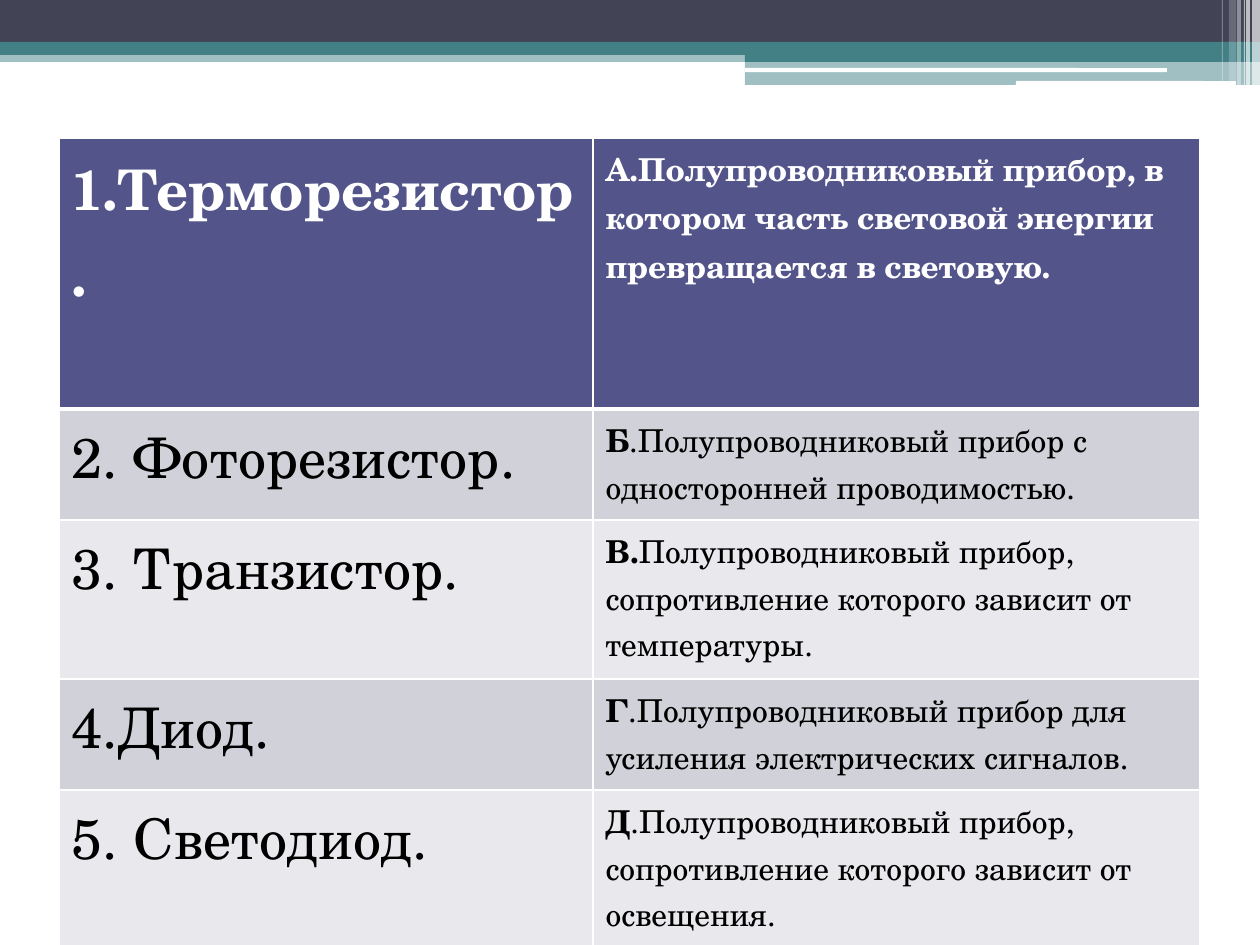
from lxml.etree import SubElement
from pptx import Presentation
from pptx.dml.color import RGBColor
from pptx.enum.shapes import MSO_SHAPE
from pptx.oxml.ns import qn
from pptx.util import Pt

EMU_PER_PX = 914400 / 126
SLIDE_WIDTH, SLIDE_HEIGHT = 1260, 945
FONT = "TeX Gyre Schola"
COLORS = {
    "dark": "424456",
    "teal": "438086",
    "white": "FFFFFF",
    "black": "000000",
    "header": "53548A",
    "band_dark": "D1D1DA",
    "band_light": "E9E9ED",
}

# left, top, width, height, colour, opacity in percent
BARS = [
    (0, 50, 1260, 12, "teal", 50),
    (0, 0, 1260, 42, "dark", 100),
    (0, 42, 1260, 13, "teal", 100),
    (745, 49, 515, 13, "teal", 100),
    (745, 61, 515, 24, "teal", 50),
]
ROUNDED_LINES = [
    (745, 68, 422, 4, "white", 100),
    (1016, 81, 220, 5, "white", 100),
]
# left, width, height, opacity in percent
STRIPES = [
    (1252, 8, 86, 65),
    (1246, 4, 86, 65),
    (1244, 1, 86, 60),
    (1237, 4, 86, 40),
    (1229, 7, 81, 20),
    (1222, 1, 81, 30),
]

# device, letter of the definition, definition
ROWS = [
    ("1.Терморезистор.", "А.",
     "Полупроводниковый прибор, в котором часть световой энергии превращается в световую."),
    ("2. Фоторезистор.", "Б",
     ".Полупроводниковый прибор с односторонней проводимостью."),
    ("3. Транзистор.", "В.",
     "Полупроводниковый прибор, сопротивление которого зависит от температуры."),
    ("4.Диод.", "Г",
     ".Полупроводниковый прибор для усиления электрических сигналов."),
    ("5. Светодиод.", "Д",
     ".Полупроводниковый прибор, сопротивление которого зависит от освещения."),
]
COLUMN_WIDTHS = [534, 607]
ROW_HEIGHTS = [271, 111, 159, 111, 159]


def px(length):
    return round(length * EMU_PER_PX)


def color(name):
    return RGBColor.from_string(COLORS[name])


def add_bar(slide, kind, left, top, width, height, fill, opacity):
    shape = slide.shapes.add_shape(kind, px(left), px(top), px(width), px(height))
    shape.shadow.inherit = False
    shape.line.fill.background()
    shape.fill.solid()
    shape.fill.fore_color.rgb = color(fill)
    if opacity < 100:
        fill_color = shape.fill._xPr.find(qn("a:solidFill"))[0]
        SubElement(fill_color, qn("a:alpha"), val=str(opacity * 1000))


def add_banner(slide, left, top):
    # Horizontal bars
    for x, y, *rest in BARS:
        add_bar(slide, MSO_SHAPE.RECTANGLE, left + x, top + y, *rest)
    for x, y, *rest in ROUNDED_LINES:
        add_bar(slide, MSO_SHAPE.ROUNDED_RECTANGLE, left + x, top + y, *rest)
    # Vertical stripes at the right end
    for x, width, height, opacity in STRIPES:
        add_bar(slide, MSO_SHAPE.RECTANGLE, left + x, top, width, height, "white", opacity)


def set_borders(cell, widths):
    properties = cell._tc.get_or_add_tcPr()
    for index, (side, width) in enumerate(widths.items()):
        line = properties.makeelement(qn(f"a:{side}"), {"w": str(Pt(width))})
        fill = SubElement(line, qn("a:solidFill"))
        SubElement(fill, qn("a:srgbClr"), val=COLORS["white"])
        properties.insert(index, line)


def fill_cell(cell, runs, size, text_color, background, widths):
    cell.fill.solid()
    cell.fill.fore_color.rgb = color(background)
    set_borders(cell, widths)
    paragraph = cell.text_frame.paragraphs[0]
    for text, bold in runs:
        run = paragraph.add_run()
        run.text = text
        font_format = {"name": FONT, "size": Pt(size), "bold": bold}
        for attribute, value in font_format.items():
            setattr(run.font, attribute, value)
        run.font.color.rgb = color(text_color)


def add_matching_table(slide, left, top):
    frame = slide.shapes.add_table(
        len(ROWS), len(COLUMN_WIDTHS), px(left), px(top),
        px(sum(COLUMN_WIDTHS)), px(sum(ROW_HEIGHTS)))
    table = frame.table
    for column, width in zip(table.columns, COLUMN_WIDTHS):
        column.width = px(width)
    for index, (device, letter, definition) in enumerate(ROWS):
        table.rows[index].height = px(ROW_HEIGHTS[index])
        header = index == 0
        text_color = "white" if header else "black"
        background = "header" if header else ("band_light", "band_dark")[index % 2]
        widths = {"lnL": 1, "lnR": 1, "lnT": 3 if index == 1 else 1,
                  "lnB": 3 if header else 1}
        definition_runs = [(letter, True), (definition, header)]
        if header:
            definition_runs = [(letter + definition, True)]
        fill_cell(table.cell(index, 0), [(device, header)], 32,
                  text_color, background, widths)
        fill_cell(table.cell(index, 1), definition_runs, 18,
                  text_color, background, widths)


def main():
    presentation = Presentation()
    presentation.slide_width = px(SLIDE_WIDTH)
    presentation.slide_height = px(SLIDE_HEIGHT)
    slide = presentation.slides.add_slide(presentation.slide_layouts[6])
    add_banner(slide, 0, 0)
    add_matching_table(slide, 59, 138)
    presentation.save("out.pptx")


if __name__ == "__main__":
    main()
